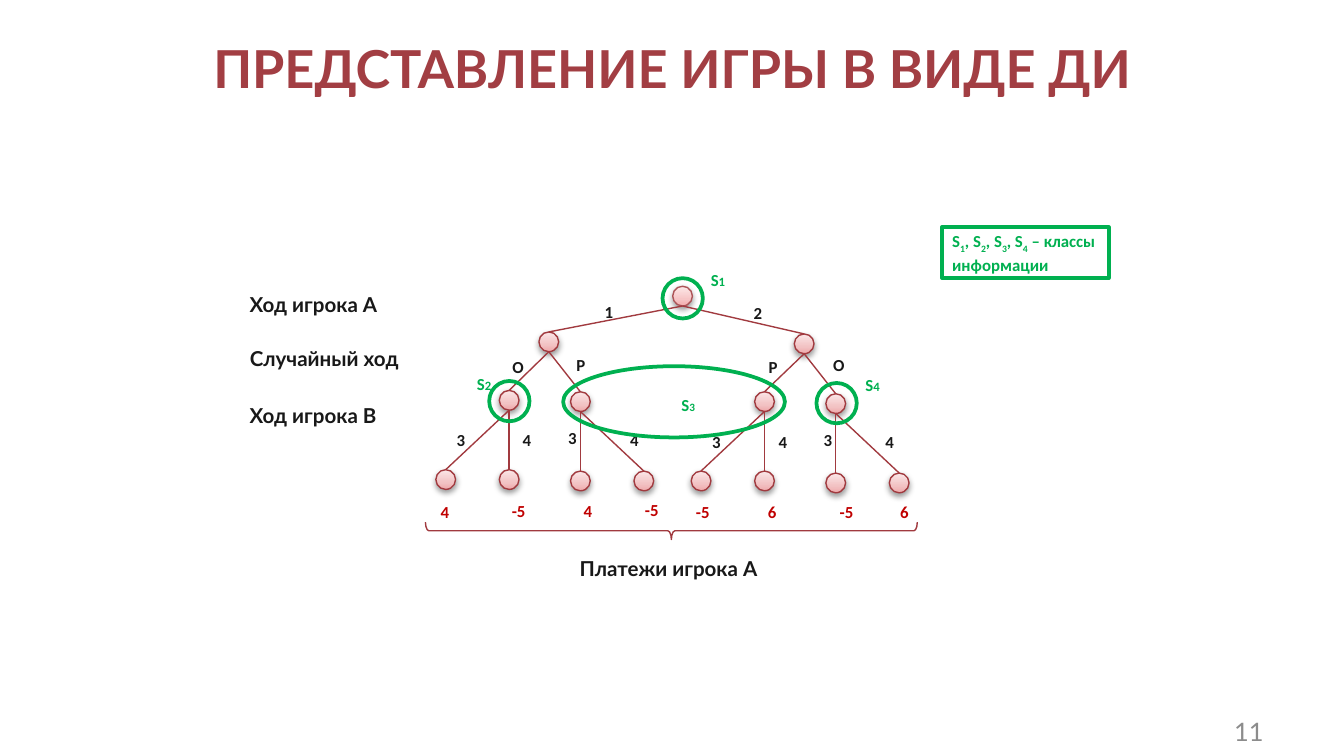
from copy import deepcopy

from lxml.etree import SubElement
from pptx import Presentation
from pptx.dml.color import RGBColor
from pptx.enum.shapes import MSO_CONNECTOR, MSO_SHAPE
from pptx.enum.text import MSO_ANCHOR, PP_ALIGN
from pptx.oxml.ns import qn
from pptx.util import Inches, Pt

TITLE_RED = RGBColor(0xA2, 0x3E, 0x43)
LINE_RED = RGBColor(0xA1, 0x3A, 0x3F)
ROOT_LINE = RGBColor(0xAC, 0x54, 0x57)
PAYOFF_RED = RGBColor(0xC0, 0x00, 0x00)
GREEN = RGBColor(0x00, 0xB0, 0x50)
INK = RGBColor(0x18, 0x18, 0x18)
GREY = RGBColor(0x8C, 0x8C, 0x8C)
WHITE = RGBColor(0xFF, 0xFF, 0xFF)
BLACK = RGBColor(0x00, 0x00, 0x00)
NODE_FILL = (RGBColor(0xEE, 0xA8, 0xAA), RGBColor(0xF2, 0xC3, 0xC4), RGBColor(0xFB, 0xE7, 0xE8))
ROOT_FILL = (RGBColor(0xF3, 0xAC, 0xAD), RGBColor(0xF6, 0xC5, 0xC6), RGBColor(0xFC, 0xE8, 0xE8))

COLUMNS, ROWS = 100, 56.25
NODE = 1.47
RING = 3
LEAF_DX, LEAF_DY = 4.72, 5.9


def grid(cells):
    """Length of a number of grid cells; columns and rows are both 0.1 inch."""
    return Inches(cells / 10)


class TreeSlide:
    def __init__(self, prs):
        self.shapes = prs.slides.add_slide(prs.slide_layouts[6]).shapes

    def style(self, p, size, color, font="Calibri", bold=True, align=PP_ALIGN.LEFT):
        p.alignment = align
        p.font.name, p.font.size, p.font.bold = font, Pt(size), bold
        p.font.color.rgb = color

    def text(self, x, y, w, h, words, size, color, anchor=MSO_ANCHOR.TOP, **style):
        tf = self.shapes.add_textbox(*map(grid, (x, y, w, h))).text_frame
        tf.word_wrap, tf.vertical_anchor = True, anchor
        p = tf.paragraphs[0]
        p.text = words
        self.style(p, size, color, **style)
        return tf

    def tag(self, x, y, words, color=INK, w=2.7):
        tf = self.text(x, y, w, 2.5, words, 9, color)
        tf.margin_right = 0
        return tf.paragraphs[0]

    def class_tag(self, x, y, number):
        self.small_index(self.tag(x, y, "S", GREEN, 3.1), number, 6.8)

    def small_index(self, p, number, size):
        r = p.add_run()
        r.text = str(number)
        r.font.size = Pt(size)

    def shape(self, kind, x, y, w, h, color, width):
        sp = self.shapes.add_shape(kind, *map(grid, (x, y, w, h)))
        sp.shadow.inherit = False
        sp.fill.background()
        sp.line.color.rgb, sp.line.width = color, Pt(width)
        return sp

    def ring(self, x, y, w=RING, h=RING):
        return self.shape(MSO_SHAPE.OVAL, x, y, w, h, GREEN, 2)

    def node(self, x, y, colors=NODE_FILL, line=LINE_RED):
        sp = self.shape(MSO_SHAPE.FLOWCHART_CONNECTOR, x, y, NODE, NODE, line, 0.75)
        sp.fill.gradient()
        sp.fill.gradient_angle = 90
        stops = sp._element.spPr.find(".//" + qn("a:gsLst"))
        stops.insert(1, deepcopy(stops[0]))
        for stop, color, position in zip(sp.fill.gradient_stops, colors, (0, 0.35, 1)):
            stop.color.rgb, stop.position = color, position
        effects = sp._element.spPr.find(qn("a:effectLst"))
        shadow = SubElement(effects, qn("a:outerShdw"), blurRad=str(Pt(3.1)), dist=str(Pt(1.6)),
                            dir="5400000", rotWithShape="0")
        tint = SubElement(shadow, qn("a:srgbClr"), val=str(BLACK))
        SubElement(tint, qn("a:alpha"), val="38000")
        return sp

    def branch(self, parent, child):
        """Line from the bottom of one node to the top of the next."""
        middle = parent.left + parent.width // 2
        bottom = parent.top + parent.height
        line = self.shapes.add_connector(MSO_CONNECTOR.STRAIGHT, middle, bottom, middle, bottom)
        line.end_connect(child, 0)
        line.line.color.rgb, line.line.width = LINE_RED, Pt(0.75)
        SubElement(line._element.spPr, qn("a:effectLst"))

    def brace(self, x, y, w, h):
        sp = self.shape(MSO_SHAPE.RIGHT_BRACE, x, y, w, h, LINE_RED, 0.75)
        sp.rotation = 90
        sp.adjustments[0], sp.adjustments[1] = 0.2, 0.5

    def legend(self, x, y, w, h):
        sp = self.shape(MSO_SHAPE.RECTANGLE, x, y, w, h, GREEN, 2)
        sp.fill.solid()
        sp.fill.fore_color.rgb = WHITE
        tf = sp.text_frame
        tf.word_wrap, tf.vertical_anchor = True, MSO_ANCHOR.MIDDLE
        tf.margin_left = tf.margin_right = grid(0.75)
        tf.margin_top = tf.margin_bottom = grid(0.38)
        p = tf.paragraphs[0]
        self.style(p, 9, GREEN)
        for number in range(1, 5):
            p.add_run().text = "S" if number == 1 else ", S"
            r = p.add_run()
            r.text = str(number)
            r.font._element.set("baseline", "-30000")
        p.add_run().text = " – классы информации"

    def wide_class(self, x, y, w, h, number):
        tf = self.ring(x, y, w, h).text_frame
        tf.vertical_anchor = MSO_ANCHOR.MIDDLE
        tf.margin_left, tf.margin_top = grid(3.1), grid(1)
        p = tf.paragraphs[0]
        p.text = "S"
        self.style(p, 9, GREEN, align=PP_ALIGN.CENTER)
        self.small_index(p, number, 6)


def draw_tree(s):
    root = s.node(50.05, 21.3, ROOT_FILL, ROOT_LINE)
    # Chance node, then its decision nodes with the side of the outer leaf
    chances = (
        ((40.1, 24.7), ((37.15, 29.05, -1), (42.45, 29.15, 1))),
        ((59.1, 24.85), ((56.15, 29.15, -1), (61.45, 29.3, 1))),
    )
    for place, decisions in chances:
        chance = s.node(*place)
        s.branch(root, chance)
        for x, y, side in decisions:
            decision = s.node(x, y)
            s.branch(chance, decision)
            for leaf_x in (x, x + side * LEAF_DX):
                s.branch(decision, s.node(leaf_x, y + LEAF_DY))


def main():
    prs = Presentation()
    prs.slide_width, prs.slide_height = grid(COLUMNS), grid(ROWS)
    s = TreeSlide(prs)

    s.text(5, 1.5, 90, 7, "ПРЕДСТАВЛЕНИЕ ИГРЫ В ВИДЕ ДИ", 28, TITLE_RED, font="Lato",
           anchor=MSO_ANCHOR.MIDDLE, align=PP_ALIGN.CENTER)
    s.text(89.4, 52.9, 5.6, 3, "11", 13.6, GREY, font="Lato", bold=False,
           anchor=MSO_ANCHOR.MIDDLE, align=PP_ALIGN.RIGHT)

    draw_tree(s)
    s.brace(49.3, 21.2, 1.3, 36.6)

    captions = ((17.6, 21.25, 13.6, "Ход игрока А"), (17.6, 25.25, 14.2, "Случайный ход"),
                (17.6, 29.5, 13.4, "Ход игрока B"), (42.15, 40.9, 18.1, "Платежи игрока А"))
    for x, y, w, words in captions:
        s.text(x, y, w, 2.9, words, 11, INK, font="Lato")

    moves = (
        (44, 21.95, "1"), (55.1, 22, "2"),
        (37.15, 26.05, "О"), (41.9, 25.9, "Р"), (56.2, 26.05, "Р"), (61, 25.9, "О"),
        (33, 31.5, "3"), (37.9, 31.5, "4"), (41.3, 31.3, "3"), (45.9, 31.5, "4"),
        (52, 31.65, "3"), (56.95, 31.6, "4"), (60.3, 31.5, "3"), (64.9, 31.6, "4"),
    )
    for x, y, words in moves:
        s.tag(x, y, words)

    payoffs = ((31.8, 36.8, "4"), (37.1, 36.75, "-5"), (42.45, 36.75, "4"), (47, 36.7, "-5"),
               (50.8, 36.85, "-5"), (56.15, 36.85, "6"), (61.5, 36.8, "-5"), (66, 36.8, "6"))
    for x, y, words in payoffs:
        s.tag(x, y, words, PAYOFF_RED, 3 if len(words) > 1 else 2.7)

    rings = ((1, 49.3, 20.7, 51.9, 19.6), (2, 36.4, 28.35, 34.5, 27.3),
             (4, 60.75, 28.5, 63.4, 27.4))
    for number, x, y, tag_x, tag_y in rings:
        s.ring(x, y)
        s.class_tag(tag_x, tag_y, number)
    s.wide_class(41.9, 27.25, 16.5, 5.3, 3)
    s.legend(70.1, 16.9, 12.4, 3.8)

    prs.save("out.pptx")


if __name__ == "__main__":
    main()
